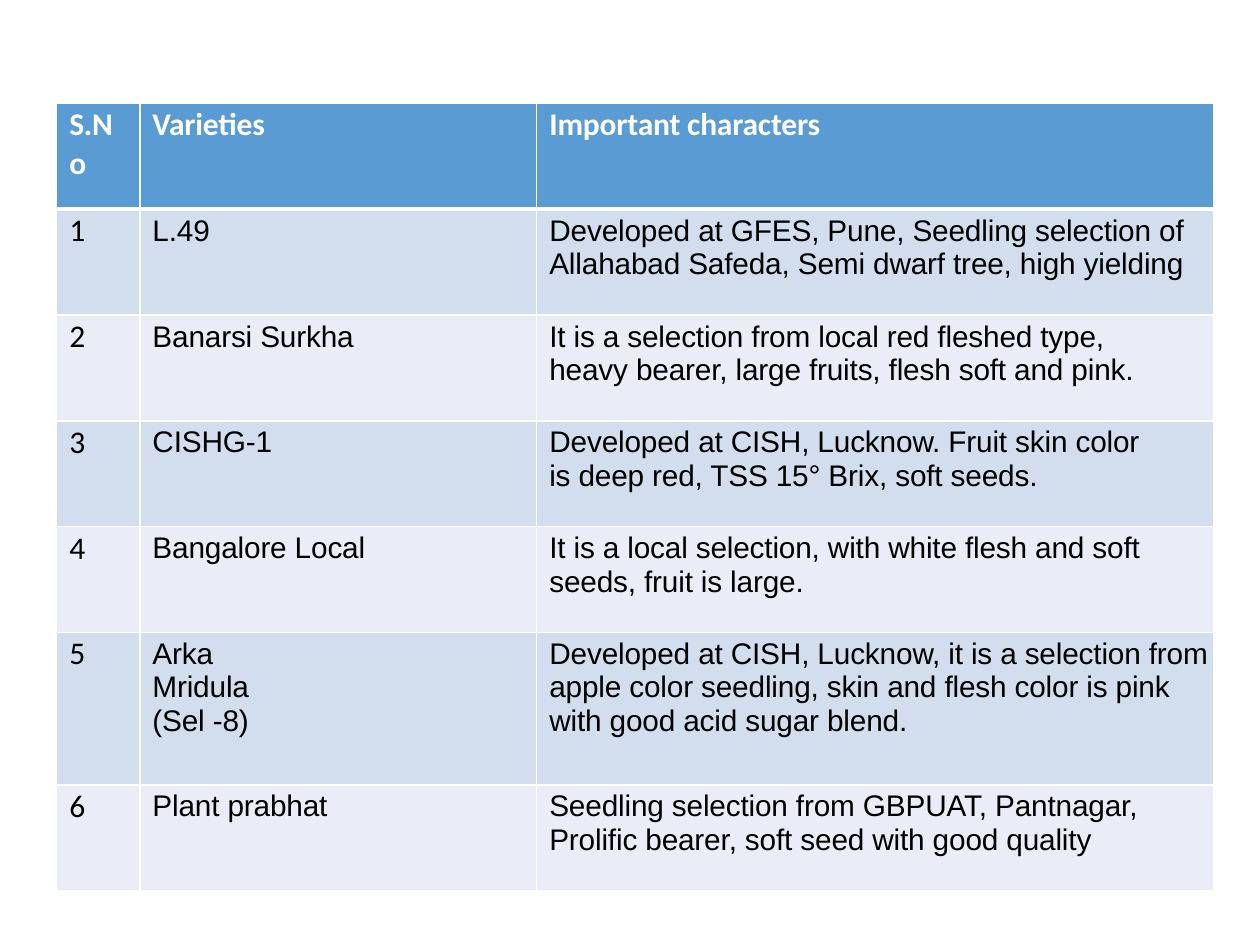
from lxml import etree
from pptx import Presentation
from pptx.dml.color import RGBColor
from pptx.oxml.ns import qn
from pptx.util import Inches, Pt

WHITE = RGBColor(0xFF, 0xFF, 0xFF)
BLACK = RGBColor(0x00, 0x00, 0x00)
HEADER_BLUE = RGBColor(0x5B, 0x9B, 0xD3)
BAND_COLORS = (RGBColor(0xD2, 0xDE, 0xED), RGBColor(0xEA, 0xED, 0xF7))

COLUMN_WIDTHS = (0.66, 3.15, 5.37)
ROW_HEIGHT = 0.84
TALL_ROW, TALL_HEIGHT = 5, 1.21
THIN, THICK = 1, 3

# Each cell is a tuple of paragraphs.
HEADER = (("S.N", "o"), ("Varieties",), ("Important characters",))
VARIETIES = (
    (("L.49",),
     ("Developed at GFES, Pune, Seedling selection of",
      "Allahabad Safeda, Semi dwarf tree, high yielding")),
    (("Banarsi Surkha",),
     ("It is a selection from local red fleshed type,",
      "heavy bearer, large fruits, flesh soft and pink.")),
    (("CISHG-1",),
     ("Developed at CISH, Lucknow. Fruit skin color",
      "is deep red, TSS 15° Brix, soft seeds.")),
    (("Bangalore Local",),
     ("It is a local selection, with white flesh and soft seeds, fruit is large.",)),
    (("Arka Mridula (Sel -8)",),
     ("Developed at CISH, Lucknow, it is a selection from apple color seedling, "
      "skin and flesh color is pink with good acid sugar blend.",)),
    (("Plant prabhat",),
     ("Seedling selection from GBPUAT, Pantnagar,",
      "Prolific bearer, soft seed with good quality")),
)


def set_borders(cell, top, bottom):
    """Draw white cell borders; top and bottom are widths in points."""
    properties = cell._tc.get_or_add_tcPr()
    widths = {"a:lnL": THIN, "a:lnR": THIN, "a:lnT": top, "a:lnB": bottom}
    for index, (tag, width) in enumerate(widths.items()):
        line = etree.Element(qn(tag), w=str(Pt(width)))
        fill = etree.SubElement(line, qn("a:solidFill"))
        etree.SubElement(fill, qn("a:srgbClr"), val=str(WHITE))
        properties.insert(index, line)


def fill_cell(cell, lines, fill, color, font_name, size, top_margin, bold=False):
    cell.fill.solid()
    cell.fill.fore_color.rgb = fill
    cell.margin_left = Inches(0.1)
    cell.margin_top = Inches(top_margin)
    cell.margin_right = cell.margin_bottom = 0
    for index, line in enumerate(lines):
        frame = cell.text_frame
        paragraph = frame.paragraphs[0] if index == 0 else frame.add_paragraph()
        run = paragraph.add_run()
        run.text = line
        run._r.get_or_add_rPr().set("spc", "-10")
        font = paragraph.font
        font.name, font.size, font.bold = font_name, Pt(size), bold
        font.color.rgb = color


def add_varieties_table(slide, left, top, width, height):
    rows = [HEADER] + [((str(number),), *cells)
                       for number, cells in enumerate(VARIETIES, start=1)]
    table = slide.shapes.add_table(
        len(rows), len(COLUMN_WIDTHS), left, top, width, height).table
    table.horz_banding = False
    for column, column_width in zip(table.columns, COLUMN_WIDTHS):
        column.width = Inches(column_width)

    for row_index, row in enumerate(rows):
        is_header = row_index == 0
        table.rows[row_index].height = Inches(
            TALL_HEIGHT if row_index == TALL_ROW else ROW_HEIGHT)
        fill = HEADER_BLUE if is_header else BAND_COLORS[(row_index - 1) % 2]
        color = WHITE if is_header else BLACK
        for column_index, lines in enumerate(row):
            cell = table.cell(row_index, column_index)
            if is_header or column_index == 0:
                style = ("Calibri", 18, 0.02)
            else:
                style = ("Arial", 17, 0.04)
            fill_cell(cell, lines, fill, color, *style, bold=is_header)
            set_borders(cell, THICK if row_index == 1 else THIN,
                        THICK if is_header else THIN)

    # A narrow text area puts each part of this name on its own line.
    table.cell(TALL_ROW, 1).margin_right = Inches(2.1)


def main():
    presentation = Presentation()
    presentation.slide_width = Inches(10)
    presentation.slide_height = Inches(7.5)
    slide = presentation.slides.add_slide(presentation.slide_layouts[6])
    add_varieties_table(slide, Inches(0.45), Inches(0.82), Inches(9.18), Inches(6.25))
    presentation.save("out.pptx")


if __name__ == "__main__":
    main()
